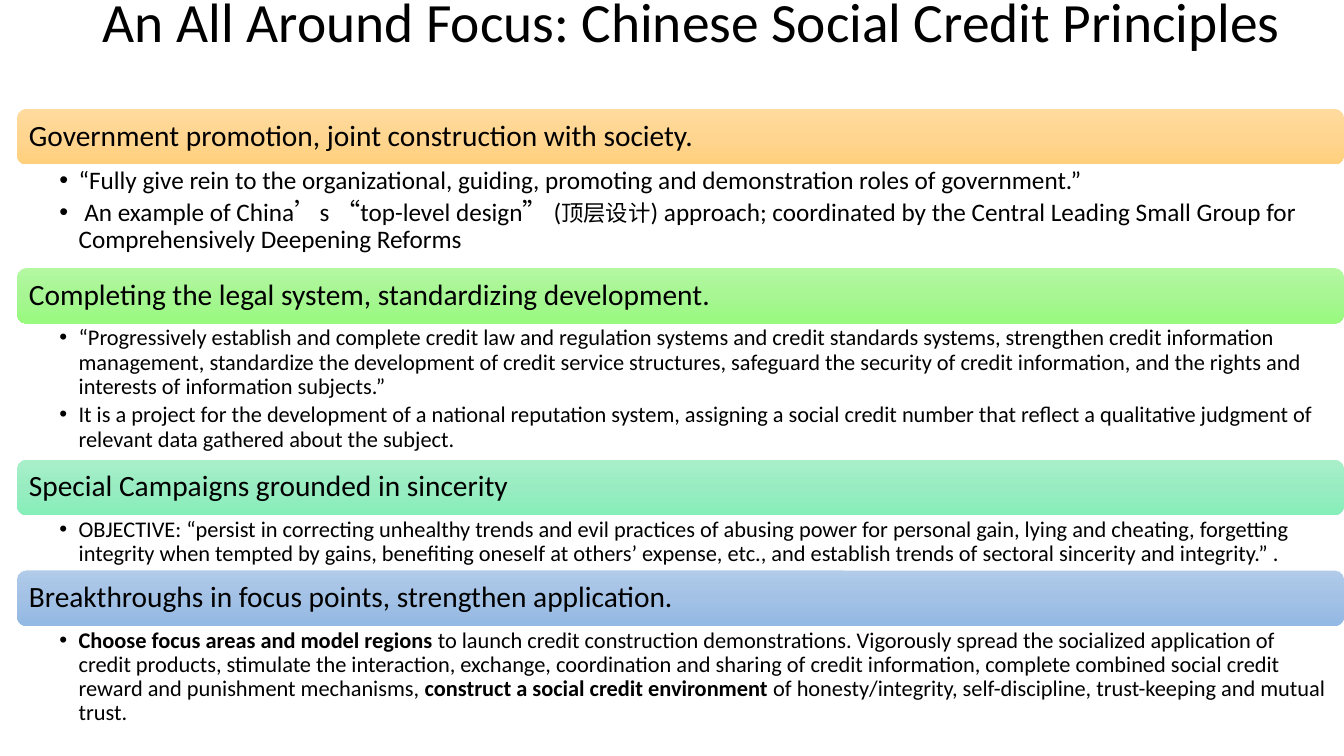
from copy import deepcopy

from lxml.etree import SubElement
from pptx import Presentation
from pptx.dml.color import RGBColor
from pptx.enum.shapes import MSO_SHAPE as Shape
from pptx.enum.text import MSO_ANCHOR as Anchor, MSO_AUTO_SIZE as Auto, PP_ALIGN as Align
from pptx.oxml.ns import qn
from pptx.util import Inches, Pt

COLORS = {
    "text": "000000",
    "orange": ["FFDB9E", "FFD590", "FFD07C"],
    "green": ["B3F8A1", "A7F693", "98FA7E"],
    "mint": ["A8F0CA", "99ECC1", "86EEB9"],
    "blue": ["B1CBE9", "A3C1E5", "93B9E4"],
}
LEFT, WIDTH, BAR = 0.17, 13.16, 0.55

# Each principle: color, heading, body height, text size, bullets of (text, size, bold) runs
PRINCIPLES = [
    ("orange", "Government promotion, joint construction with society.", 1.03, 18, [
        [("“Fully give rein to the organizational, guiding, promoting and demonstration roles of government.”", 18, False)],
        [(" An example of China’s “top-level design” (", 18, False),
         ("顶层设计", 16, False),
         (") approach; coordinated by the Central Leading Small Group for Comprehensively Deepening Reforms", 18, False)],
    ]),
    ("green", "Completing the legal system, standardizing development.", 1.35, 16, [
        [("“Progressively establish and complete credit law and regulation systems and credit standards systems, "
          "strengthen credit information management, standardize the development of credit service structures, "
          "safeguard the security of credit information, and the rights and interests of information subjects.”", 16, False)],
        [("It is a project for the development of a national reputation system, assigning a social credit number "
          "that reflect a qualitative judgment of relevant data gathered about the subject.", 16, False)],
    ]),
    ("mint", "Special Campaigns grounded in sincerity", 0.55, 16, [
        [("OBJECTIVE: “persist in correcting unhealthy trends and evil practices of abusing power for personal gain, "
          "lying and cheating, forgetting integrity when tempted by gains, benefiting oneself at others’ expense, "
          "etc., and establish trends of sectoral sincerity and integrity.” .", 16, False)],
    ]),
    ("blue", "Breakthroughs in focus points, strengthen application.", 1.05, 16, [
        [("Choose focus areas and model regions ", 16, True),
         ("to launch credit construction demonstrations. Vigorously spread the socialized application of credit "
          "products, stimulate the interaction, exchange, coordination and sharing of credit information, complete "
          "combined social credit reward and punishment mechanisms, ", 16, False),
         ("construct a social credit environment ", 16, True),
         ("of honesty/integrity, self-discipline, trust-keeping and mutual trust.", 16, False)],
    ]),
]


def set_frame(frame, anchor, margins):
    frame.word_wrap = True
    frame.auto_size = Auto.NONE
    frame.vertical_anchor = anchor
    for side, size in zip(("left", "top", "right", "bottom"), margins):
        setattr(frame, f"margin_{side}", Inches(size))


def add_run(para, text, size, bold=False):
    para.alignment = Align.LEFT
    para.line_spacing = 0.9
    run = para.add_run()
    run.text = text
    for name, value in {"name": "Calibri", "size": Pt(size), "bold": bold}.items():
        setattr(run.font, name, value)
    run.font.color.rgb = RGBColor.from_string(COLORS["text"])


deck = Presentation()
deck.slide_width, deck.slide_height = Inches(13.33), Inches(7.5)
slide = deck.slides.add_slide(deck.slide_layouts[5])

# Title
title = slide.shapes.title
title.left, title.top, title.width, title.height = map(Inches, (0.92, 0, 12.42, 0.98))
set_frame(title.text_frame, Anchor.MIDDLE, (0.1, 0, 0.1, 0.5))
add_run(title.text_frame.paragraphs[0], "An All Around Focus: Chinese Social Credit Principles", 39.6)

top = 1.08
for color, heading, height, size, bullets in PRINCIPLES:
    # Heading bar
    bar = slide.shapes.add_shape(Shape.ROUNDED_RECTANGLE, *map(Inches, (LEFT, top, WIDTH, BAR)))
    bar.shadow.inherit = False
    bar.line.fill.background()
    bar.fill.gradient()
    bar.fill.gradient_angle = 270
    first = bar.element.spPr.find(".//" + qn("a:gs"))
    first.addnext(deepcopy(first))
    for stop, tint, place in zip(bar.fill.gradient_stops, COLORS[color], (0, 0.5, 1)):
        stop.color.rgb = RGBColor.from_string(tint)
        stop.position = place
    set_frame(bar.text_frame, Anchor.MIDDLE, (0.09, 0.09, 0.09, 0.09))
    add_run(bar.text_frame.paragraphs[0], heading, 21)
    top += BAR

    # Bullets below the bar
    body = slide.shapes.add_textbox(*map(Inches, (LEFT, top, WIDTH, height)))
    frame = body.text_frame
    set_frame(frame, Anchor.TOP, (0.42, 0.03, 0.16, 0.03))
    for index, runs in enumerate(bullets):
        para = frame.add_paragraph() if index else frame.paragraphs[0]
        para.level = 1
        para.space_after = Pt(size * 0.2)
        props = para._p.get_or_add_pPr()
        props.set("marL", str(Inches(0.19)))
        props.set("indent", str(-Inches(0.19)))
        SubElement(props, qn("a:buFont"), typeface="Arial")
        SubElement(props, qn("a:buChar"), char="•")
        for text, points, bold in runs:
            add_run(para, text, points, bold)
    top += height

deck.save("out.pptx")
